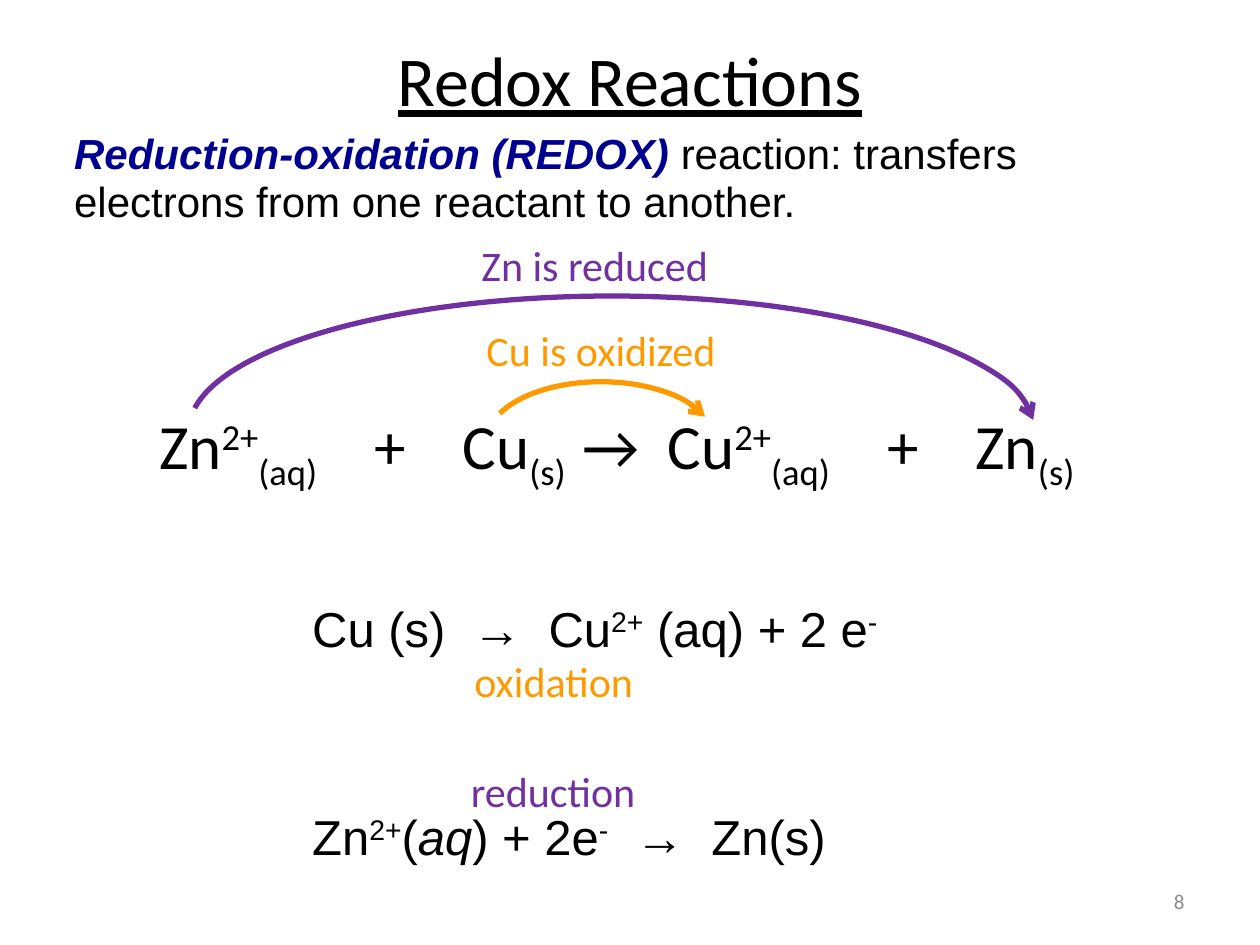
from lxml.etree import SubElement
from pptx import Presentation
from pptx.dml.color import RGBColor
from pptx.enum.shapes import MSO_SHAPE
from pptx.enum.text import MSO_ANCHOR, MSO_AUTO_SIZE, PP_ALIGN
from pptx.oxml.ns import qn
from pptx.util import Inches, Pt

BLACK, NAVY, GREY = "000000", "000090", "8C8C8C"
PURPLE, ORANGE = "7030A0", "FF9900"
UP, DOWN = 30, -25
LEFT, MID, RIGHT = PP_ALIGN.LEFT, PP_ALIGN.CENTER, PP_ALIGN.RIGHT

EQUATION = [
    ("Zn",), ("2+", {"base": UP}), ("(aq)", {"base": DOWN}),
    ("    +    Cu",), ("(s)  ", {"base": DOWN}),
    ("→  Cu",), ("2+", {"base": UP}), ("(aq)", {"base": DOWN}),
    ("    +    Zn",), ("(s)", {"base": DOWN}),
]
MEANING = [
    ("Reduction-oxidation (REDOX) ", {"bold": True, "italic": True, "color": NAVY}),
    ("reaction: transfers electrons from one reactant to another.",),
]
HALVES = [
    [("Cu (s)  →  Cu",), ("2+", {"base": UP}), (" (aq) + 2 e",), ("-", {"base": UP})],
    [("Zn",), ("2+", {"base": UP}), ("(",), ("aq", {"italic": True}),
     (") + 2e",), ("-", {"base": UP}), ("  →  Zn(s)",)],
]
LABELS = [
    ("Zn is reduced", (3.32, 1.85, 2.8, 0.5), PURPLE, True),
    ("Cu is oxidized", (3.37, 2.53, 2.8, 0.5), ORANGE, True),
    ("oxidation", (3.66, 5.15, 1.47, 0.5), ORANGE, False),
    ("reduction", (3.63, 6.03, 1.52, 0.5), PURPLE, False),
]
ARCS = [
    ((1.5, 2.35, 6.71, 2.13), (109.82, 215.16), PURPLE),
    ((3.87, 3.03, 1.8, 0.92), (116.7, 208.53), ORANGE),
]


def rgb(color):
    return RGBColor.from_string(color)


def place(box):
    return [Inches(n) for n in box]


def write(shape, lines, size, face="Calibri", color=BLACK, align=MID,
          anchor=MSO_ANCHOR.TOP, wrap=True, gap=0):
    frame = shape.text_frame
    frame.word_wrap = wrap
    frame.auto_size = MSO_AUTO_SIZE.NONE
    frame.vertical_anchor = anchor
    for i, line in enumerate(lines):
        para = frame.add_paragraph() if i else frame.paragraphs[0]
        para.alignment = align
        if i:
            para.space_before = Pt(gap)
        for text, *rest in line:
            look = rest[0] if rest else {}
            run = para.add_run()
            run.text = text
            font = run.font
            font.name, font.size = face, Pt(size)
            font.bold = look.get("bold", False)
            font.italic = look.get("italic", False)
            font.underline = look.get("under", False)
            font.color.rgb = rgb(look.get("color", color))
            if "base" in look:
                font._element.set("baseline", str(look["base"] * 1000))


def add_text(slide, box, lines, size, **look):
    shape = slide.shapes.add_textbox(*place(box))
    write(shape, lines, size, **look)
    return shape


def add_arc(slide, box, ends, color):
    arc = slide.shapes.add_shape(MSO_SHAPE.ARC, *place(box))
    arc.adjustments[0], arc.adjustments[1] = ends
    arc.shadow.inherit = False
    arc.fill.background()
    arc.line.color.rgb = rgb(color)
    arc.line.width = Pt(3)
    SubElement(arc.line._get_or_add_ln(), qn("a:tailEnd"), type="arrow")


def main():
    deck = Presentation()
    deck.slide_width, deck.slide_height = Inches(10), Inches(7.5)
    slide = deck.slides.add_slide(deck.slide_layouts[5])

    title = slide.shapes.title
    title.left, title.top, title.width, title.height = place((0.75, 3.04, 8.29, 1.06))
    write(title, [EQUATION], 36, anchor=MSO_ANCHOR.MIDDLE)

    add_text(slide, (0, 0, 10, 1.25), [[("Redox Reactions", {"under": True})]], 40,
             anchor=MSO_ANCHOR.MIDDLE)
    about = add_text(slide, (0.49, 0.99, 9.02, 0.87), [MEANING], 24,
                     face="Arial", align=LEFT)
    about.text_frame.paragraphs[0].line_spacing = 0.95
    add_text(slide, (2.38, 4.7, 5.74, 2.32), HALVES, 28,
             face="Arial", align=LEFT, gap=85)

    for box, ends, color in ARCS:
        add_arc(slide, box, ends, color)
    for text, box, color, wrap in LABELS:
        add_text(slide, box, [[(text,)]], 24, color=color, wrap=wrap)
    add_text(slide, (7.17, 6.95, 2.33, 0.4), [[("8",)]], 12, color=GREY,
             align=RIGHT, anchor=MSO_ANCHOR.MIDDLE)

    deck.save("out.pptx")


if __name__ == "__main__":
    main()
